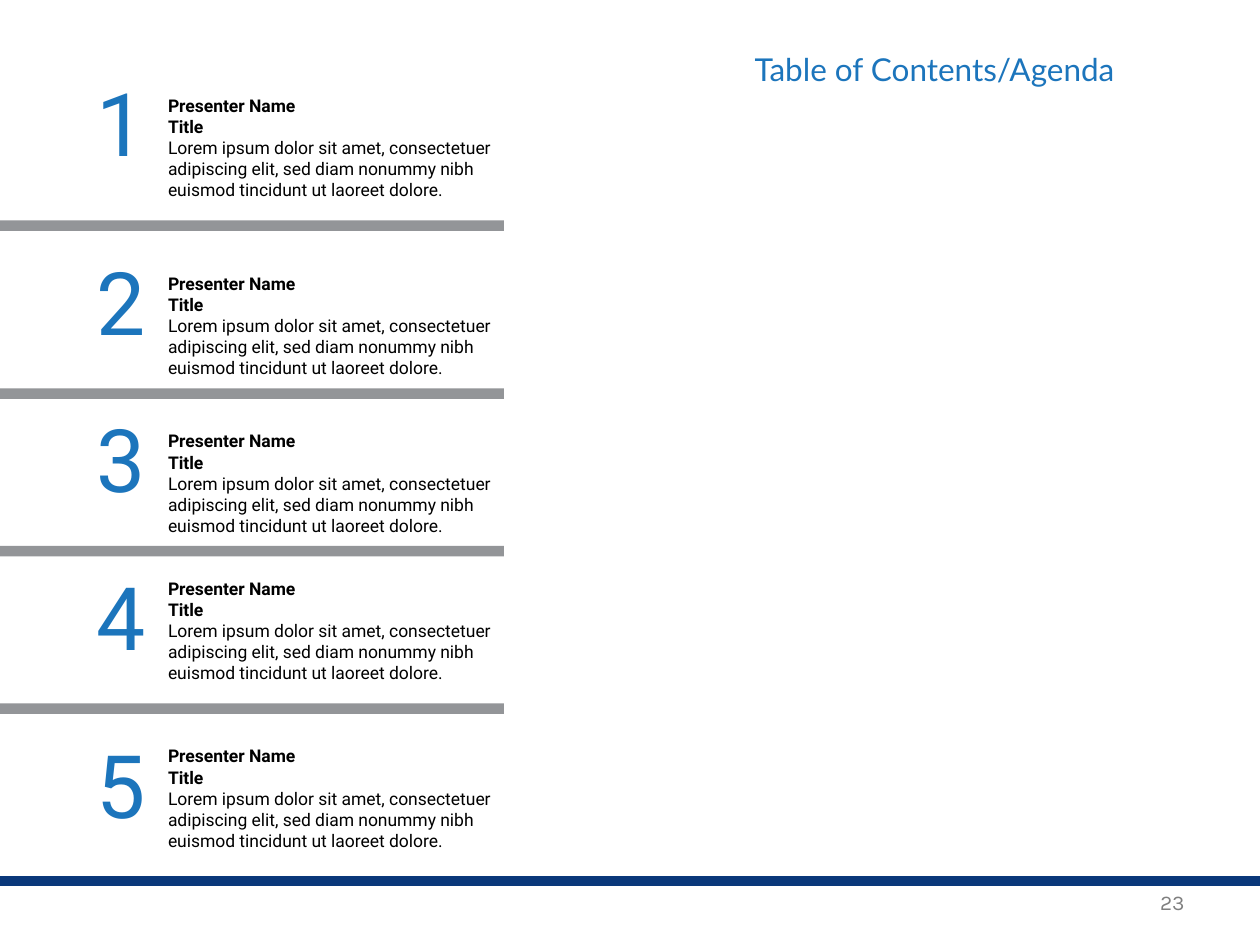
"""Build an agenda slide with five numbered presenters."""
from dataclasses import dataclass

from lxml import etree
from pptx import Presentation
from pptx.dml.color import RGBColor
from pptx.enum.shapes import MSO_CONNECTOR, MSO_SHAPE
from pptx.enum.text import MSO_ANCHOR, MSO_AUTO_SIZE, PP_ALIGN
from pptx.oxml.ns import qn
from pptx.util import Pt

RECT = MSO_SHAPE.RECTANGLE
STRAIGHT = MSO_CONNECTOR.STRAIGHT
LEFT, CENTER, RIGHT = PP_ALIGN.LEFT, PP_ALIGN.CENTER, PP_ALIGN.RIGHT
TOP, MIDDLE = MSO_ANCHOR.TOP, MSO_ANCHOR.MIDDLE


@dataclass(frozen=True)
class Theme:
    blue: RGBColor = RGBColor(0x1C, 0x75, 0xBC)
    navy: RGBColor = RGBColor(0x0A, 0x38, 0x7A)
    bar: RGBColor = RGBColor(0x93, 0x95, 0x98)
    page: RGBColor = RGBColor(0x7F, 0x7F, 0x7F)
    black: RGBColor = RGBColor(0, 0, 0)
    number_size: int = 50
    title_size: int = 18
    page_size: int = 12
    body_size: int = 10


THEME = Theme()
NUMBER = {"name": "Roboto", "size": Pt(THEME.number_size), "color": THEME.blue}
BODY = {"name": "Roboto", "size": Pt(THEME.body_size), "color": THEME.black, "bold": False}
HEADING = BODY | {"bold": True}
TITLE = {"name": "Lato", "size": Pt(THEME.title_size), "color": THEME.blue}
PAGE = {"name": "Karla", "size": Pt(THEME.page_size), "color": THEME.page}

SLIDE_W, SLIDE_H = 720, 540
NUMBER_TOPS = (36, 138, 228, 318, 414)
ENTRY_TOPS = (54, 156, 246, 330, 426)
BAR_TOPS = (126, 222, 312, 402)
ENTRY = (
    ("Presenter Name", HEADING),
    ("Title", HEADING),
    ("Lorem ipsum dolor sit amet, consectetuer adipiscing elit, "
     "sed diam nonummy nibh euismod tincidunt ut laoreet dolore.", BODY),
)


def format_run(r, fmt):
    for key, value in fmt.items():
        if key == "color":
            r.font.color.rgb = value
        else:
            setattr(r.font, key, value)


def add_text(s, box, lines, align=LEFT, anchor=TOP, inset=True, grow=True):
    tf = s.shapes.add_textbox(*map(Pt, box)).text_frame
    tf.word_wrap = True
    tf.vertical_anchor = anchor
    tf.auto_size = MSO_AUTO_SIZE.SHAPE_TO_FIT_TEXT if grow else MSO_AUTO_SIZE.NONE
    if not inset:
        for side in ("left", "top", "right", "bottom"):
            setattr(tf, f"margin_{side}", 0)
    for i, (text, fmt) in enumerate(lines):
        p = tf.add_paragraph() if i else tf.paragraphs[0]
        p.alignment = align
        r = p.add_run()
        r.text = text
        format_run(r, fmt)


def add_bar(s, top):
    sp = s.shapes.add_shape(RECT, 0, Pt(top), Pt(288), Pt(6))
    sp.shadow.inherit = False
    sp.fill.solid()
    sp.fill.fore_color.rgb = THEME.bar
    sp.line.fill.background()


def add_footer_rule(s, y):
    line = s.shapes.add_connector(STRAIGHT, 0, Pt(y), Pt(SLIDE_W), Pt(y))
    line.line.color.rgb = THEME.navy
    line.line.width = Pt(6)
    etree.SubElement(line._element.spPr, qn("a:effectLst"))


def main():
    prs = Presentation()
    prs.slide_width, prs.slide_height = Pt(SLIDE_W), Pt(SLIDE_H)
    s = prs.slides.add_slide(prs.slide_layouts[6])

    add_footer_rule(s, 503.5)
    for n, (number_top, entry_top) in enumerate(zip(NUMBER_TOPS, ENTRY_TOPS), 1):
        add_text(s, (48, number_top, 48, 67.7), [(str(n), NUMBER)])
        add_text(s, (96, entry_top, 192, 85), ENTRY, inset=False)
    for top in BAR_TOPS:
        add_bar(s, top)
    add_text(s, (516, 504, 168, 22.5), [("23", PAGE)], RIGHT, MIDDLE, grow=False)
    add_text(s, (414, 25.2, 240, 29), [("Table of Contents/Agenda", TITLE)], CENTER)

    prs.save("out.pptx")


if __name__ == "__main__":
    main()
